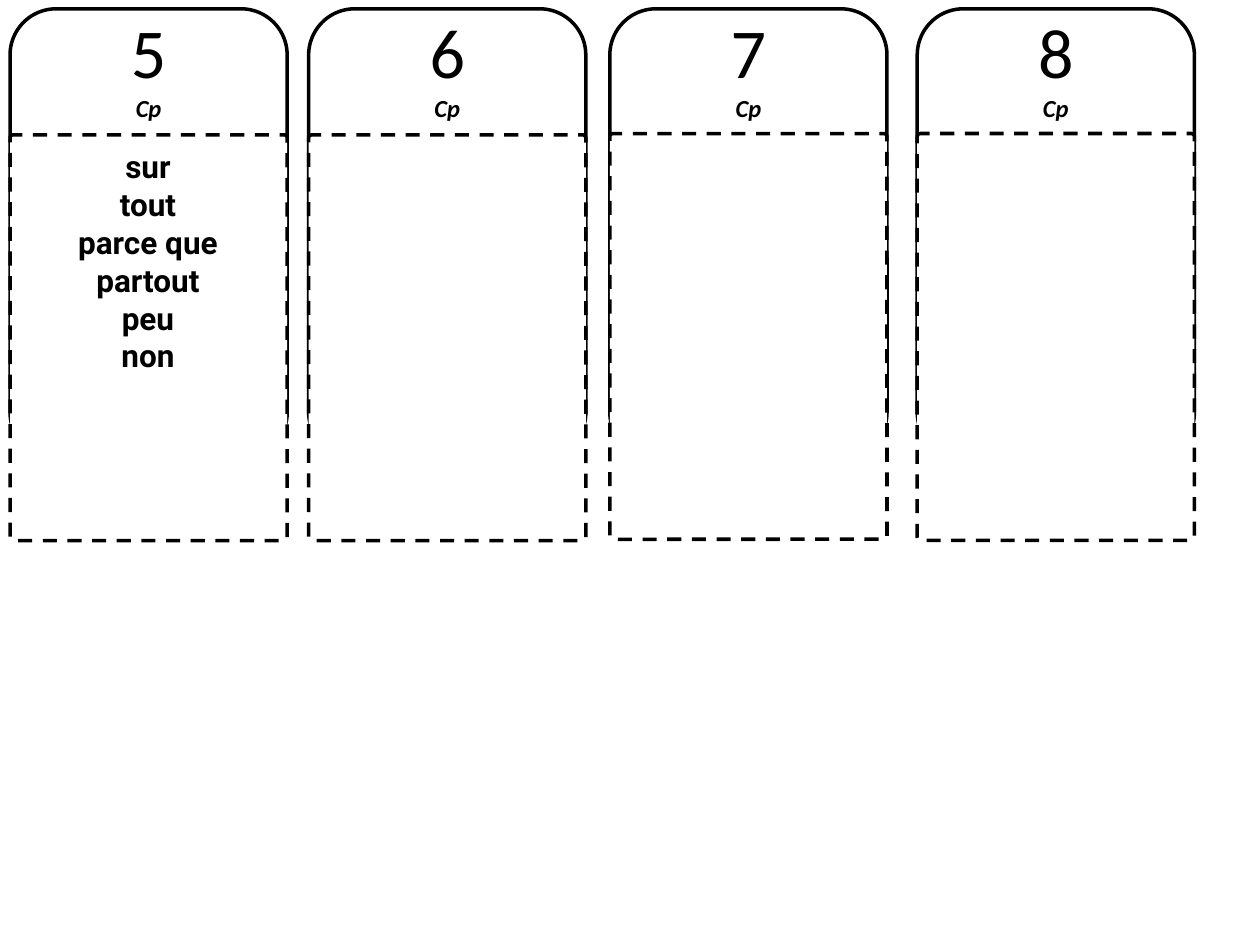
from pptx import Presentation
from pptx.dml.color import RGBColor
from pptx.enum.dml import MSO_LINE as Dash
from pptx.enum.shapes import MSO_SHAPE as Shape
from pptx.enum.text import MSO_AUTO_SIZE as Fit, PP_ALIGN as Align
from pptx.util import Inches, Pt

BLACK = RGBColor(0, 0, 0)
WHITE = RGBColor(255, 255, 255)

WIDTH = 2.2
TOP = 0.07
# Number, left edge, top and height of the word panel
CARDS = [
    ("5", 0.08, 1.07, 3.22),
    ("6", 2.45, 1.07, 3.22),
    ("7", 4.84, 1.06, 3.22),
    ("8", 7.28, 1.06, 3.23),
]
WORDS = ["sur", "tout", "parce que", "partout", "peu", "non"]


def write(para, text, size, font="Calibri", bold=False, italic=False):
    para.alignment = Align.CENTER
    run = para.add_run()
    run.text = text
    run.font.size = Pt(size)
    run.font.name = font
    run.font.bold = bold
    run.font.italic = italic
    run.font.color.rgb = BLACK


def add_frame(slide, left, top, width, height):
    box = slide.shapes.add_textbox(Inches(left), Inches(top), Inches(width), Inches(height))
    box.text_frame.word_wrap = True
    return box.text_frame


def add_box(slide, left, top, height, fill=None, dash=None):
    box = slide.shapes.add_shape(
        Shape.ROUNDED_RECTANGLE, Inches(left), Inches(top), Inches(WIDTH), Inches(height))
    box.shadow.inherit = False
    if fill is None:
        box.fill.background()
    else:
        box.fill.solid()
        box.fill.fore_color.rgb = fill
    box.line.color.rgb = BLACK
    box.line.width = Pt(2)
    if dash is not None:
        box.line.dash_style = dash
    return box


def add_card(slide, label, left, top, height):
    # Rounded tab, and dashed panel for the words
    add_box(slide, left, TOP, 3.57)
    panel = add_box(slide, left, top, height, fill=WHITE, dash=Dash.DASH)
    panel.adjustments[0] = 0.011

    # Heading
    frame = add_frame(slide, left, TOP, WIDTH, 0.95)
    frame.margin_top = frame.margin_bottom = 0
    write(frame.paragraphs[0], label, 40)
    write(frame.add_paragraph(), "Cp", 14, bold=True, italic=True)


def add_words(slide, words):
    frame = add_frame(slide, 0.36, 1.12, 1.63, 1.92)
    frame.auto_size = Fit.SHAPE_TO_FIT_TEXT
    for i, word in enumerate(words):
        para = frame.add_paragraph() if i else frame.paragraphs[0]
        write(para, word, 18, font="Roboto", bold=True)


def main():
    deck = Presentation()
    deck.slide_width = Inches(10)
    deck.slide_height = Inches(7.5)
    slide = deck.slides.add_slide(deck.slide_layouts[6])
    for card in CARDS:
        add_card(slide, *card)
    add_words(slide, WORDS)
    deck.save("out.pptx")


if __name__ == "__main__":
    main()
